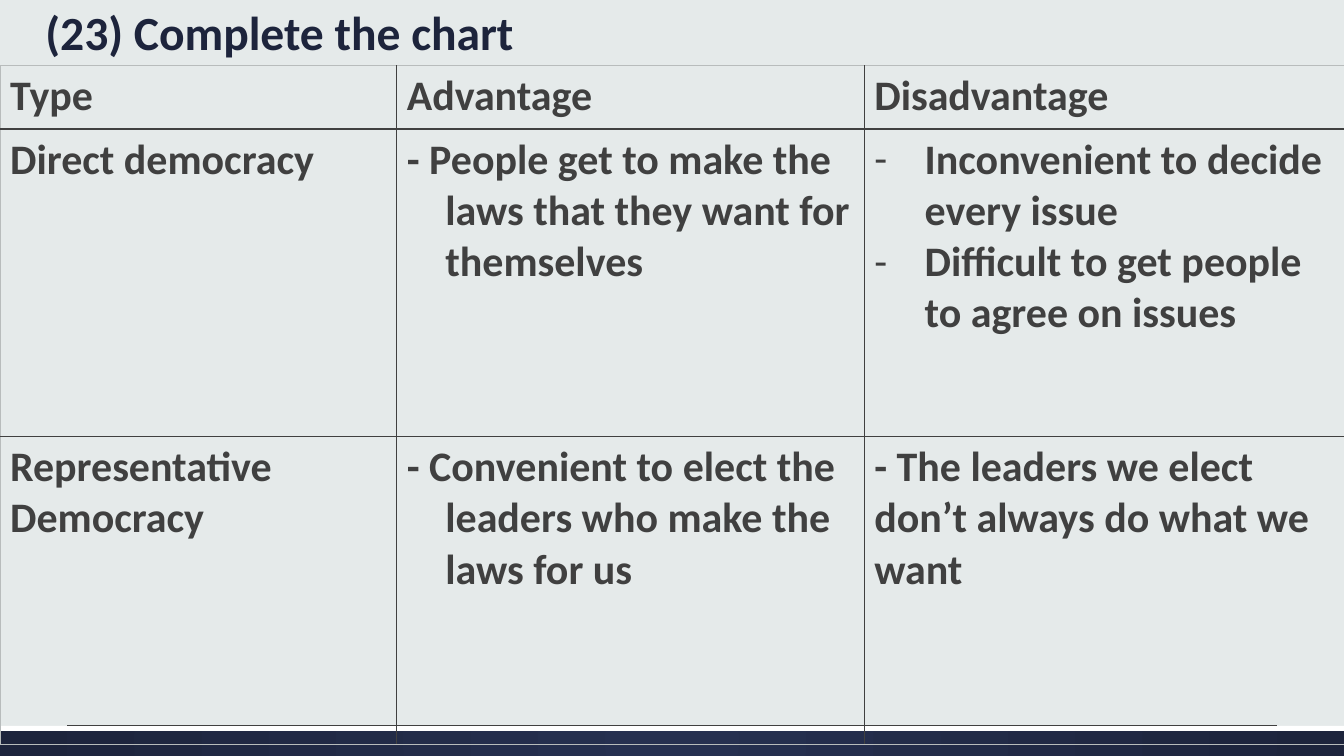
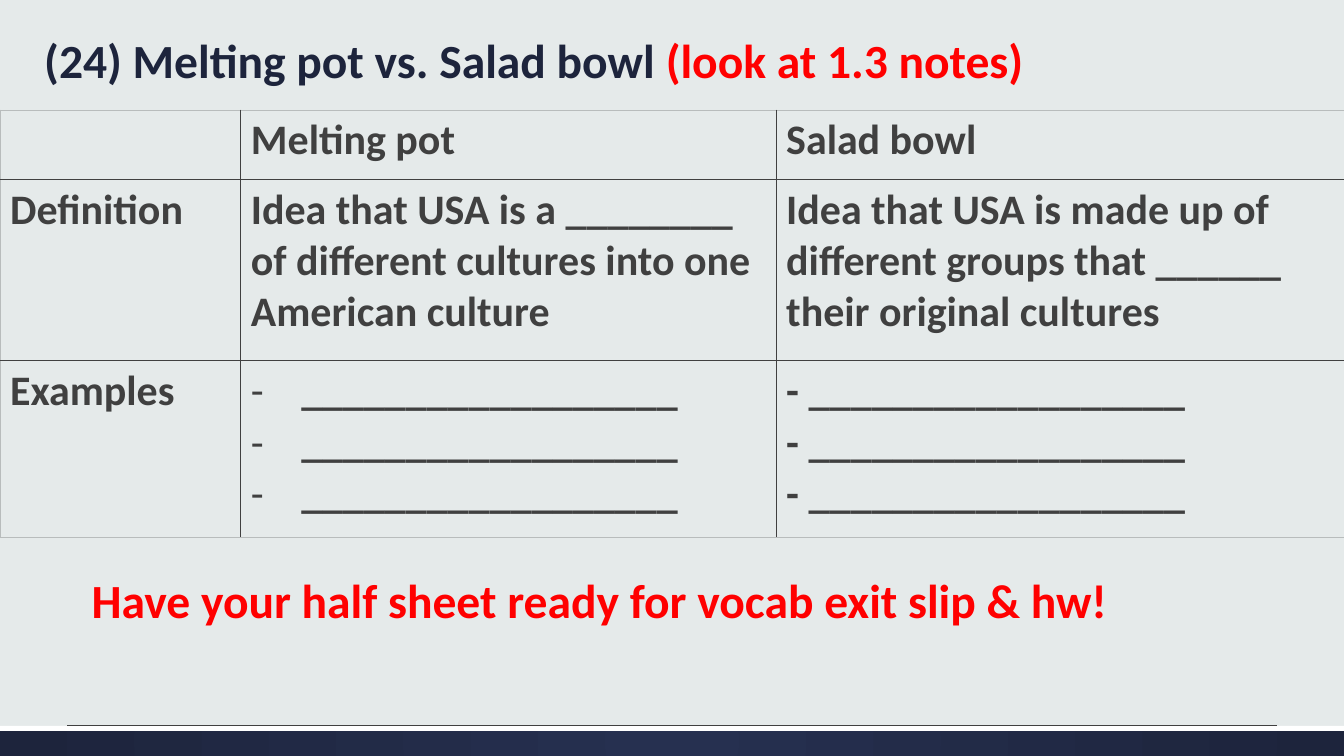
from dataclasses import dataclass

from lxml.etree import SubElement
from pptx import Presentation
from pptx.dml.color import RGBColor
from pptx.enum.shapes import MSO_CONNECTOR as Connector, MSO_SHAPE as Preset
from pptx.enum.text import MSO_ANCHOR as Anchor, MSO_AUTO_SIZE as AutoSize, PP_ALIGN as Align
from pptx.oxml.ns import qn
from pptx.util import Cm, Pt

WIDTH, HEIGHT = 33.87, 19.05
BAND_TOP = 18.29
FONT = "Calibri"
PAPER, NAVY, NAVY_LIGHT, WHITE = "E5EAEA", "1D243C", "263050", "FFFFFF"
INK, RED, EDGE = "404040", "FF0000", "B8BCBC"
TITLE_SIZE, TABLE_SIZE = 34, 30


@dataclass(frozen=True)
class Span:
    text: str
    color: str = NAVY


@dataclass(frozen=True)
class Item:
    """One paragraph in a cell; hang is the hanging indent in cm."""
    text: str
    hang: float = 0
    bullet: str = ""


@dataclass(frozen=True)
class Grid:
    top: float
    columns: list[float]
    rows: list[float]
    cells: list[list[list[Item]]]


@dataclass(frozen=True)
class Box:
    left: float
    top: float
    width: float
    height: float

    def lengths(self) -> tuple[Cm, Cm, Cm, Cm]:
        return Cm(self.left), Cm(self.top), Cm(self.width), Cm(self.height)


@dataclass(frozen=True)
class Page:
    title: list[Span]
    title_box: Box
    grid: Grid
    reminder: str = ""


def rgb(color: str) -> RGBColor:
    return RGBColor.from_string(color)


def plain(text: str) -> list[Item]:
    return [Item(text)]


def hanging(text: str) -> list[Item]:
    return [Item(text, hang=0.97)]


def dashed(*texts: str) -> list[Item]:
    return [Item(text, hang=1.27, bullet="-") for text in texts]


BLANK = "_" * 18
PAGES = [
    Page(
        [Span("(23) Complete the chart")],
        Box(0.89, 0, 31.37, 1.65),
        Grid(1.65, [10, 11.78, 12.09], [1.6, 7.75, 7.75], [
            [plain("Type"), plain("Advantage"), plain("Disadvantage")],
            [plain("Direct democracy"),
             hanging("- People get to make the laws that they want for themselves"),
             dashed("Inconvenient to decide every issue",
                    "Difficult to get people to agree on issues")],
            [plain("Representative Democracy"),
             hanging("- Convenient to elect the leaders who make the laws for us"),
             plain("- The leaders we elect don’t always do what we want")],
        ]),
    ),
    Page(
        [Span("(24) Melting pot vs. Salad bowl "), Span("(look at 1.3 notes)", RED)],
        Box(0.86, 0.28, 31.37, 2.08),
        Grid(2.77, [6.07, 13.49, 14.31], [1.75, 4.57, 4.45], [
            [[], plain("Melting pot"), plain("Salad bowl")],
            [plain("Definition"),
             plain("Idea that USA is a ________ of different cultures into one American culture"),
             plain("Idea that USA is made up of different groups that ______ "
                   "their original cultures")],
            [plain("Examples"), dashed(*[BLANK] * 3), [Item(f"- {BLANK}")] * 3],
        ]),
        "Have your half sheet ready for vocab exit slip & hw!",
    ),
]
REMINDER_BOX = Box(2.06, 13.89, 31.37, 2.08)


def write(para, text: str, *, size: float, color: str, bold: bool = True) -> None:
    span = para.add_run()
    span.text = text
    span.font.name = FONT
    span.font.size = Pt(size)
    span.font.bold = bold
    span.font.color.rgb = rgb(color)


def write_heading(shape, spans: list[Span]) -> None:
    frame = shape.text_frame
    frame.word_wrap = True
    frame.auto_size = AutoSize.NONE
    frame.vertical_anchor = Anchor.BOTTOM
    para = frame.paragraphs[0]
    para.alignment = Align.LEFT
    para.line_spacing = 0.9
    for span in spans:
        write(para, span.text, size=TITLE_SIZE, color=span.color)


def add_bar(slide, box: Box):
    bar = slide.shapes.add_shape(Preset.RECTANGLE, *box.lengths())
    bar.shadow.inherit = False
    bar.line.fill.background()
    return bar


def fill_radial(shape, inner: str, outer: str) -> None:
    shape.fill.gradient()
    for stop, color in zip(shape.fill.gradient_stops, (inner, outer)):
        stop.color.rgb = rgb(color)
    gradient = shape.element.spPr.find(qn("a:gradFill"))
    gradient.remove(gradient.find(qn("a:lin")))
    circle = SubElement(gradient, qn("a:path"), {"path": "circle"})
    SubElement(circle, qn("a:fillToRect"), {side: "50000" for side in "ltrb"})


def decorate_layout(layout, slide) -> None:
    """Build the footer band on the slide, then move it into its layout."""
    for holder in list(layout.placeholders):
        if holder.placeholder_format.idx != 0:
            holder.element.getparent().remove(holder.element)
    band = add_bar(slide, Box(0, BAND_TOP, WIDTH, HEIGHT - BAND_TOP))
    fill_radial(band, NAVY_LIGHT, NAVY)
    strip = add_bar(slide, Box(0, BAND_TOP, WIDTH, 0.13))
    strip.fill.solid()
    strip.fill.fore_color.rgb = rgb(WHITE)
    rule_top = Cm(18.27)
    rule = slide.shapes.add_connector(Connector.STRAIGHT, Cm(1.7), rule_top, Cm(32.17), rule_top)
    rule.line.color.rgb = rgb(INK)
    rule.line.width = Pt(0.75)
    SubElement(rule.element.spPr, qn("a:effectLst"))
    for shape in (band, strip, rule):
        layout.shapes.element.append(shape.element)


def set_borders(cell, outer_sides: dict[str, bool]) -> None:
    """Give the outer sides a pale hairline and the inner ones a dark line."""
    properties = cell._tc.get_or_add_tcPr()
    for position, (side, is_outer) in enumerate(outer_sides.items()):
        width = Pt(0.5 if is_outer else 1)
        line = SubElement(properties, qn(f"a:ln{side}"), {"w": str(width)})
        fill = SubElement(line, qn("a:solidFill"))
        SubElement(fill, qn("a:srgbClr"), {"val": EDGE if is_outer else INK})
        properties.insert(position, line)


def write_item(para, item: Item) -> None:
    properties = para._p.get_or_add_pPr()
    if item.hang:
        properties.set("marL", str(Cm(item.hang)))
        properties.set("indent", str(-Cm(item.hang)))
    if item.bullet:
        SubElement(properties, qn("a:buFont"), {"typeface": FONT})
        SubElement(properties, qn("a:buChar"), {"char": item.bullet})
    write(para, item.text, size=TABLE_SIZE, color=INK)


def add_grid(slide, grid: Grid) -> None:
    row_count, column_count = len(grid.rows), len(grid.columns)
    box = Box(0, grid.top, sum(grid.columns), sum(grid.rows))
    table = slide.shapes.add_table(row_count, column_count, *box.lengths()).table
    table.first_row = table.horz_banding = False
    for column, width in zip(table.columns, grid.columns):
        column.width = Cm(width)
    for r, height in enumerate(grid.rows):
        table.rows[r].height = Cm(height)
        for c, items in enumerate(grid.cells[r]):
            cell = table.cell(r, c)
            cell.fill.background()
            set_borders(cell, {"L": c == 0, "R": c == column_count - 1,
                               "T": r == 0, "B": r == row_count - 1})
            frame = cell.text_frame
            for number, item in enumerate(items):
                write_item(frame.add_paragraph() if number else frame.paragraphs[0], item)


def add_page(slide, page: Page) -> None:
    title = slide.shapes.title
    title.left, title.top, title.width, title.height = page.title_box.lengths()
    write_heading(title, page.title)
    add_grid(slide, page.grid)
    if page.reminder:
        reminder = slide.shapes.add_textbox(*REMINDER_BOX.lengths())
        write_heading(reminder, [Span(page.reminder, RED)])


def main() -> None:
    deck = Presentation()
    deck.slide_width, deck.slide_height = Cm(WIDTH), Cm(HEIGHT)
    background = deck.slide_master.background.fill
    background.solid()
    background.fore_color.rgb = rgb(PAPER)
    layout = deck.slide_layouts.get_by_name("Title Only")
    slides = [deck.slides.add_slide(layout) for _ in PAGES]
    decorate_layout(layout, slides[0])
    for slide, page in zip(slides, PAGES):
        add_page(slide, page)
    deck.save("out.pptx")


if __name__ == "__main__":
    main()
